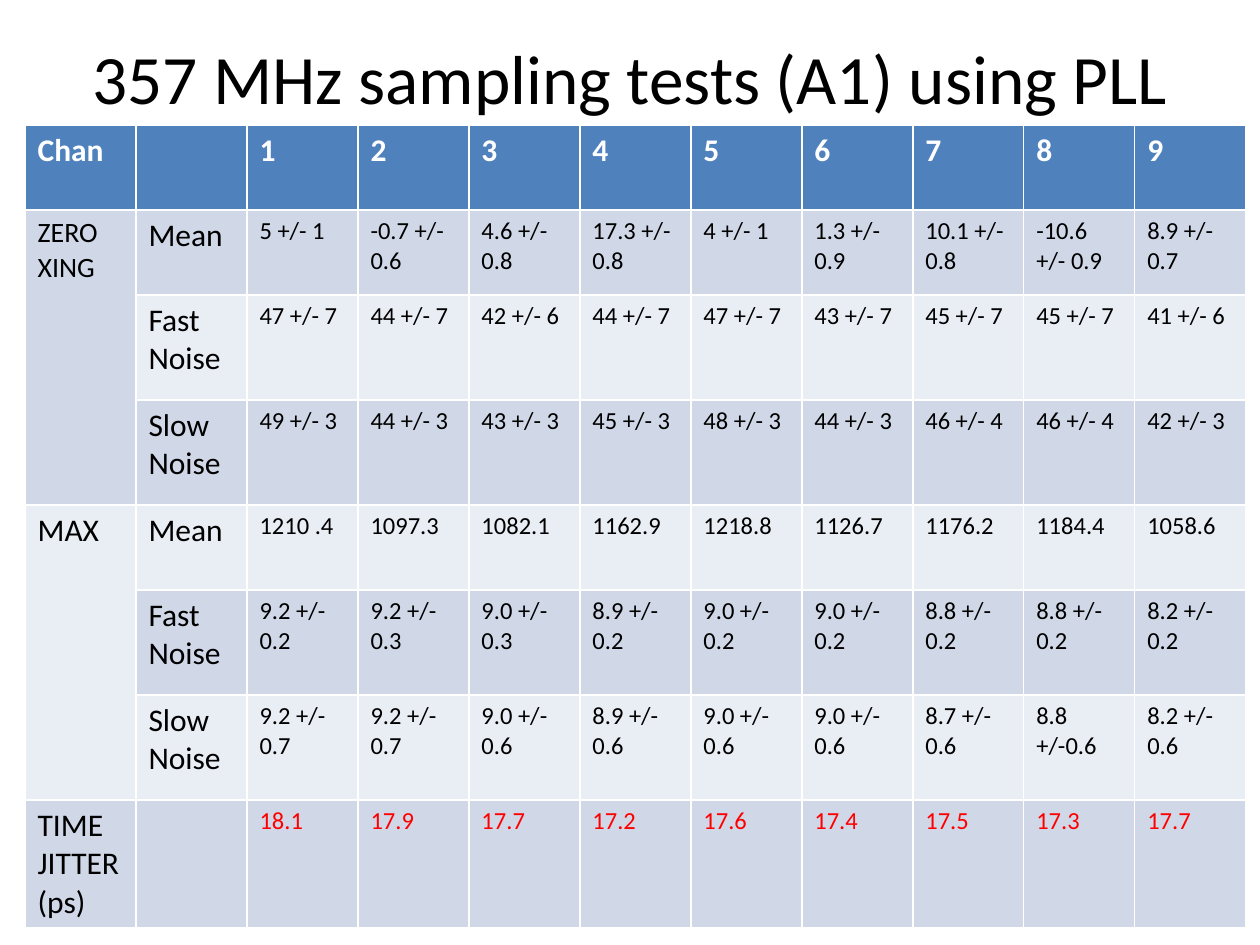
from pptx import Presentation
from pptx.dml.color import RGBColor
from pptx.enum.text import MSO_ANCHOR, MSO_AUTO_SIZE, PP_ALIGN
from pptx.util import Emu, Pt

MIDDLE = MSO_ANCHOR.MIDDLE
CENTER = PP_ALIGN.CENTER
NO_FIT = MSO_AUTO_SIZE.NONE

PX_PER_INCH = 126
FONT = "Calibri"
TITLE_ONLY = 5

BLACK = RGBColor(0x00, 0x00, 0x00)
WHITE = RGBColor(0xFF, 0xFF, 0xFF)
RED = RGBColor(0xFF, 0x00, 0x00)
HEADER_BLUE = RGBColor(0x4F, 0x81, 0xBD)
BAND_DARK = RGBColor(0xD0, 0xD8, 0xE8)
BAND_LIGHT = RGBColor(0xE9, 0xED, 0xF4)

TITLE = "357 MHz sampling tests (A1) using PLL"
TITLE_BOX = (63, 38, 1134, 77)
TABLE_BOX = (25, 125, 1221, 800)
ROW_HEIGHTS = [85, 85, 105, 105, 85, 105, 105, 125]
GROUP_STARTS = [1, 4]
GROUP_ROWS = 3

ROWS = [
    ["Chan", ""] + [str(channel) for channel in range(1, 10)],
    ["ZERO XING", "Mean", "5 +/- 1", "-0.7 +/- 0.6", "4.6 +/- 0.8", "17.3 +/- 0.8",
     "4 +/- 1", "1.3 +/- 0.9", "10.1 +/- 0.8", "-10.6 +/- 0.9", "8.9 +/- 0.7"],
    ["", "Fast Noise", "47 +/- 7", "44 +/- 7", "42 +/- 6", "44 +/- 7",
     "47 +/- 7", "43 +/- 7", "45 +/- 7", "45 +/- 7", "41 +/- 6"],
    ["", "Slow\nNoise", "49 +/- 3", "44 +/- 3", "43 +/- 3", "45 +/- 3",
     "48 +/- 3", "44 +/- 3", "46 +/- 4", "46 +/- 4", "42 +/- 3"],
    ["MAX", "Mean", "1210 .4", "1097.3", "1082.1", "1162.9",
     "1218.8", "1126.7", "1176.2", "1184.4", "1058.6"],
    ["", "Fast Noise", "9.2 +/- 0.2", "9.2 +/- 0.3", "9.0 +/- 0.3", "8.9 +/- 0.2",
     "9.0 +/- 0.2", "9.0 +/- 0.2", "8.8 +/- 0.2", "8.8 +/- 0.2", "8.2 +/- 0.2"],
    ["", "Slow\nNoise", "9.2 +/- 0.7", "9.2 +/- 0.7", "9.0 +/- 0.6", "8.9 +/- 0.6",
     "9.0 +/- 0.6", "9.0 +/- 0.6", "8.7 +/- 0.6", "8.8 +/-0.6", "8.2 +/- 0.6"],
    ["TIME\nJITTER (ps)", "", "18.1", "17.9", "17.7", "17.2",
     "17.6", "17.4", "17.5", "17.3", "17.7"],
]


def px(length):
    return Emu(round(length * 914400 / PX_PER_INCH))


def add_span(para, text, size, color, bold=False):
    span = para.add_run()
    span.text = text
    span.font.name = FONT
    span.font.size = Pt(size)
    span.font.bold = bold
    span.font.color.rgb = color


def place_title(page, box):
    title = page.shapes.title
    title.left, title.top, title.width, title.height = map(px, box)
    frame = title.text_frame
    frame.auto_size = NO_FIT
    frame.vertical_anchor = MIDDLE
    para = frame.paragraphs[0]
    para.alignment = CENTER
    add_span(para, TITLE, 39.6, BLACK)


def cell_fill(row):
    if row == 0:
        return HEADER_BLUE
    return BAND_DARK if row % 2 else BAND_LIGHT


def text_style(row, column):
    if row == 0:
        return 18, WHITE, True
    if column < 2:
        return (16 if (row, column) == (1, 0) else 18), BLACK, False
    return 14, (RED if row == len(ROWS) - 1 else BLACK), False


def fill_cell(cell, text, row, column):
    cell.fill.solid()
    cell.fill.fore_color.rgb = cell_fill(row)
    if not text:
        return
    frame = cell.text_frame
    for index, line in enumerate(text.split("\n")):
        para = frame.add_paragraph() if index else frame.paragraphs[0]
        add_span(para, line, *text_style(row, column))


def place_table(page, box):
    column_count = len(ROWS[0])
    table = page.shapes.add_table(len(ROWS), column_count, *map(px, box)).table
    for column in table.columns:
        column.width = px(box[2] / column_count)
    for row, height in zip(table.rows, ROW_HEIGHTS):
        row.height = px(height)
    for start in GROUP_STARTS:
        table.cell(start, 0).merge(table.cell(start + GROUP_ROWS - 1, 0))
    for row, texts in enumerate(ROWS):
        for column, text in enumerate(texts):
            fill_cell(table.cell(row, column), text, row, column)


def main():
    deck = Presentation()
    deck.slide_width, deck.slide_height = px(1260), px(945)
    page = deck.slides.add_slide(deck.slide_layouts[TITLE_ONLY])
    place_title(page, TITLE_BOX)
    place_table(page, TABLE_BOX)
    deck.save("out.pptx")


if __name__ == "__main__":
    main()
